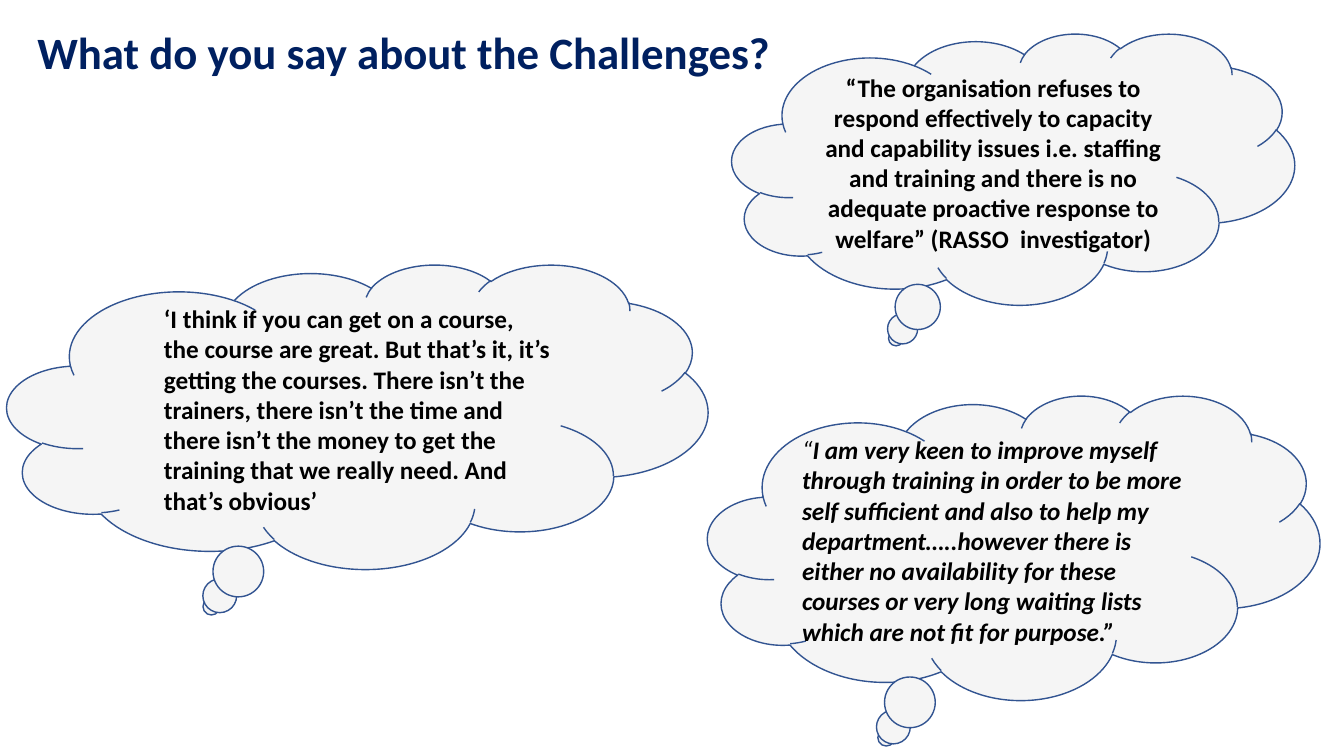
from dataclasses import dataclass

from pptx import Presentation
from pptx.dml.color import RGBColor
from pptx.enum.shapes import MSO_SHAPE
from pptx.enum.text import MSO_ANCHOR, PP_ALIGN
from pptx.util import Pt

EMU_PER_PX = 9144  # 100 px to the inch
TITLE_ONLY = 5


@dataclass(frozen=True)
class Theme:
    font: str = "Calibri"
    title_size: int = 32
    quote_size: int = 18
    title_color: str = "002060"
    quote_color: str = "000000"
    cloud_fill: str = "F5F5F5"
    cloud_line: str = "325491"


THEME = Theme()


def px(length):
    return length * EMU_PER_PX


def style_font(font, size, color, bold=None, italic=None):
    font.name = THEME.font
    font.size = Pt(size)
    font.color.rgb = RGBColor.from_string(color)
    font.bold = bold
    font.italic = italic


def set_title(page, box, text):
    title = page.shapes.title
    title.left, title.top, title.width, title.height = map(px, box)
    title.text_frame.vertical_anchor = MSO_ANCHOR.MIDDLE
    para = title.text_frame.paragraphs[0]
    para.text = text
    para.alignment = PP_ALIGN.LEFT
    para.line_spacing = 0.9
    style_font(para.font, THEME.title_size, THEME.title_color, bold=True)


def add_thought(page, box, text, align=PP_ALIGN.LEFT, bold=True, italic=None):
    """Draw a thought cloud and return its paragraph."""
    cloud = page.shapes.add_shape(MSO_SHAPE.CLOUD_CALLOUT, *map(px, box))
    cloud.shadow.inherit = False
    cloud.fill.solid()
    cloud.fill.fore_color.rgb = RGBColor.from_string(THEME.cloud_fill)
    cloud.line.color.rgb = RGBColor.from_string(THEME.cloud_line)
    cloud.line.width = Pt(1)
    frame = cloud.text_frame
    frame.word_wrap = True
    frame.vertical_anchor = MSO_ANCHOR.MIDDLE
    para = frame.paragraphs[0]
    para.alignment = align
    para.add_run().text = text
    style_font(para.font, THEME.quote_size, THEME.quote_color, bold, italic)
    return para


def main():
    deck = Presentation()
    deck.slide_width, deck.slide_height = px(1333), px(750)
    page = deck.slides.add_slide(deck.slide_layouts[TITLE_ONLY])
    set_title(page, (27, 33, 848, 44), "What do you say about the Challenges?")

    add_thought(
        page, (726, 33, 558, 269),
        "“The organisation refuses to respond effectively to capacity and "
        "capability issues i.e. staffing and training and there is no adequate "
        "proactive response to welfare” (RASSO  investigator)",
        align=PP_ALIGN.CENTER)

    course_quote = add_thought(
        page, (7, 262, 695, 302),
        "‘I think if you can get on a course, the course are great. But that’s "
        "it, it’s getting the courses. There isn’t the trainers, there isn’t "
        "the time and there isn’t the money to get the training that we really "
        "need. And that’s obvious’")
    course_quote.space_before = Pt(12)
    course_quote.space_after = Pt(8)
    course_quote._p.get_or_add_pPr().set("marL", str(px(50)))

    keen_quote = add_thought(
        page, (702, 392, 607, 302), "“", bold=None, italic=True)
    span = keen_quote.add_run()
    span.text = (
        "I am very keen to improve myself through training in order to be more "
        "self sufficient and also to help my department…..however there is "
        "either no availability for these courses or very long waiting lists "
        "which are not fit for purpose.”")
    span.font.bold = True

    deck.save("out.pptx")


if __name__ == "__main__":
    main()
